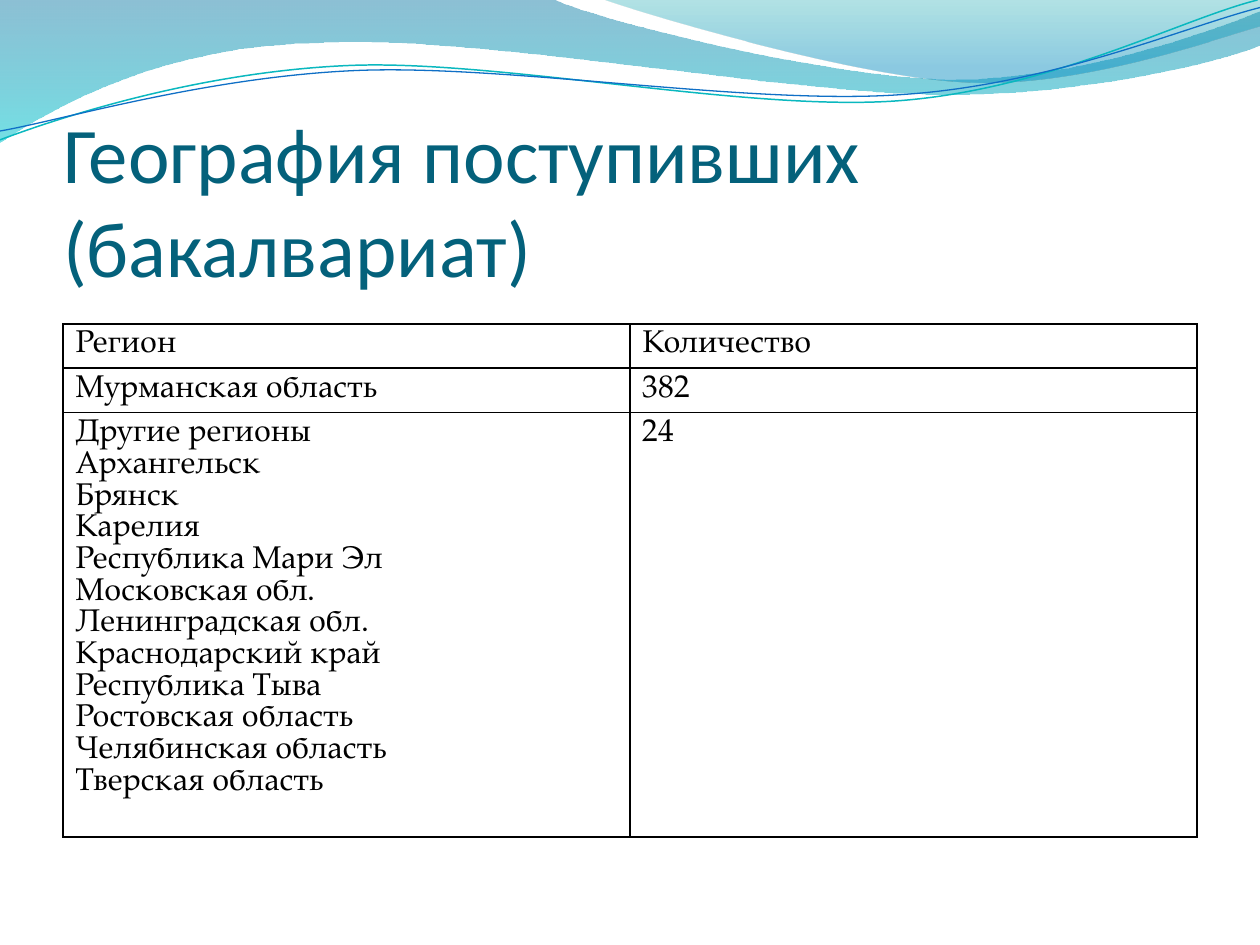
"""Builds a slide with a wave header, a title and a table of student regions."""
import pptx
import pptx.dml.color
import pptx.enum.text
import pptx.oxml
import pptx.oxml.ns
import pptx.util

TITLE = "География поступивших (бакалвариат)"
ROWS = [
    (["Регион"], ["Количество"]),
    (["Мурманская область"], ["382"]),
    (["Другие регионы", "Архангельск", "Брянск", "Карелия",
      "Республика Мари Эл", "Московская обл.", "Ленинградская обл.",
      "Краснодарский край", "Республика Тыва", "Ростовская область",
      "Челябинская область", "Тверская область"], ["24"]),
]
HEIGHTS = [0.35, 0.35, 3.37]
THEME = {
    "title": {"font": "Calibri", "size": 45, "color": "04617B"},
    "cell": {"font": "TeX Gyre Pagella", "size": 18, "color": "000000"},
    "border": "000000",
    "back": [("0074A1", 45, 0), ("00C6CF", 55, 1)],
    "front": [("00A1A9", 30, 0), ("008BBF", 45, 0.8)],
    "teal": ("0AB8BF", 0.85),
    "blue": ("0F6FC6", 0.75),
}
WAVES = [
    ("back", [(0, 0), (4.4, 0),
              (4.76, 0.17, 6.64, 0.63, 7.58, 0.63),
              (8.53, 0.63, 9.58, 0.26, 10, 0.09), (10, 0.36),
              (9.83, 0.44, 8.7, 0.76, 7.46, 0.75),
              (6.22, 0.75, 3.82, 0.28, 2.57, 0.34),
              (1.29, 0.36, 0.46, 0.83, 0, 1.13)]),
    ("front", [(4.79, 0), (5.09, 0.11, 6.82, 0.62, 7.69, 0.65),
               (8.56, 0.69, 9.61, 0.32, 10, 0.21), (10, 0)]),
    ("teal", [(0, 1.11), (0.48, 0.93, 1.58, 0.57, 2.77, 0.52),
              (3.95, 0.47, 5.93, 0.89, 7.13, 0.8),
              (8.33, 0.71, 9.38, 0.15, 9.98, 0)]),
    ("blue", [(0, 1.04), (0.47, 0.96, 1.64, 0.61, 2.83, 0.56),
              (4.03, 0.51, 5.97, 0.84, 7.17, 0.75),
              (8.36, 0.67, 9.41, 0.21, 10, 0.06)]),
]
WIDE, HIGH, EDGE = 10, 7.5, 0.5
inch = pptx.util.Inches
qn = pptx.oxml.ns.qn
SPACE = pptx.oxml.ns.nsdecls("a")


def rgb(code):
    return pptx.dml.color.RGBColor.from_string(code)


def write(frame, lines, font, size, color):
    for i, line in enumerate(lines):
        para = frame.paragraphs[0] if i == 0 else frame.add_paragraph()
        run = para.add_run()
        run.text = line
        run.font.name = font
        run.font.size = pptx.util.Pt(size)
        run.font.color.rgb = rgb(color)


def bend(shape, parts):
    sides = list(shape.element.spPr.iter(qn("a:lnTo")))
    for side, part in zip(sides, parts[1:]):
        if len(part) == 2:
            continue
        dots = "".join(
            f'<a:pt x="{inch(x) - shape.left}" y="{inch(y) - shape.top}"/>'
            for x, y in zip(part[::2], part[1::2]))
        curve = pptx.oxml.parse_xml(
            f'<a:cubicBezTo {SPACE}>{dots}</a:cubicBezTo>')
        side.getparent().replace(side, curve)


def wave(slide, style, parts):
    look = THEME[style]
    solid = isinstance(look, list)
    ends = [tuple(inch(n) for n in part[-2:]) for part in parts]
    pen = slide.shapes.build_freeform(*ends[0])
    pen.add_line_segments(ends[1:], close=solid)
    shape = pen.convert_to_shape()
    bend(shape, parts)
    shape.shadow.inherit = False
    if not solid:
        shape.fill.background()
        shape.line.color.rgb = rgb(look[0])
        shape.line.width = pptx.util.Pt(look[1])
        return
    shape.line.fill.background()
    shape.fill.gradient()
    shape.fill.gradient_angle = 270
    for stop, (color, _, place) in zip(shape.fill.gradient_stops, look):
        stop.color.rgb = rgb(color)
        stop.position = place
    tints = shape.element.spPr.iter(qn("a:srgbClr"))
    for tint, (_, share, _) in zip(tints, look):
        tint.append(pptx.oxml.parse_xml(
            f'<a:alpha {SPACE} val="{share * 1000}"/>'))


def rule(cell):
    props = cell._tc.get_or_add_tcPr()
    for side in "LRTB":
        props.append(pptx.oxml.parse_xml(
            f'<a:ln{side} {SPACE} w="12700"><a:solidFill>'
            f'<a:srgbClr val="{THEME["border"]}"/></a:solidFill></a:ln{side}>'))
    cell.fill.background()


def main():
    deck = pptx.Presentation()
    deck.slide_width, deck.slide_height = inch(WIDE), inch(HIGH)
    slide = deck.slides.add_slide(deck.slide_layouts[5])
    for style, parts in WAVES:
        wave(slide, style, parts)

    span = WIDE - 2 * EDGE
    title = slide.shapes.title
    title.left, title.top = inch(EDGE), inch(0.83)
    title.width, title.height = inch(span), inch(HIGH / 5)
    frame = title.text_frame
    frame.word_wrap = True
    frame.auto_size = pptx.enum.text.MSO_AUTO_SIZE.NONE
    frame.vertical_anchor = pptx.enum.text.MSO_ANCHOR.BOTTOM
    frame.margin_left = frame.margin_right = frame.margin_bottom = 0
    frame.margin_top = inch(0.05)
    frame.paragraphs[0].alignment = pptx.enum.text.PP_ALIGN.LEFT
    write(frame, [TITLE], **THEME["title"])

    table = slide.shapes.add_table(
        len(ROWS), len(ROWS[0]), inch(EDGE), inch(2.57),
        inch(span), inch(sum(HEIGHTS))).table
    table.first_row = table.horz_banding = False
    for r, row in enumerate(ROWS):
        table.rows[r].height = inch(HEIGHTS[r])
        for c, lines in enumerate(row):
            cell = table.cell(r, c)
            rule(cell)
            write(cell.text_frame, lines, **THEME["cell"])
    deck.save("out.pptx")


if __name__ == "__main__":
    main()
